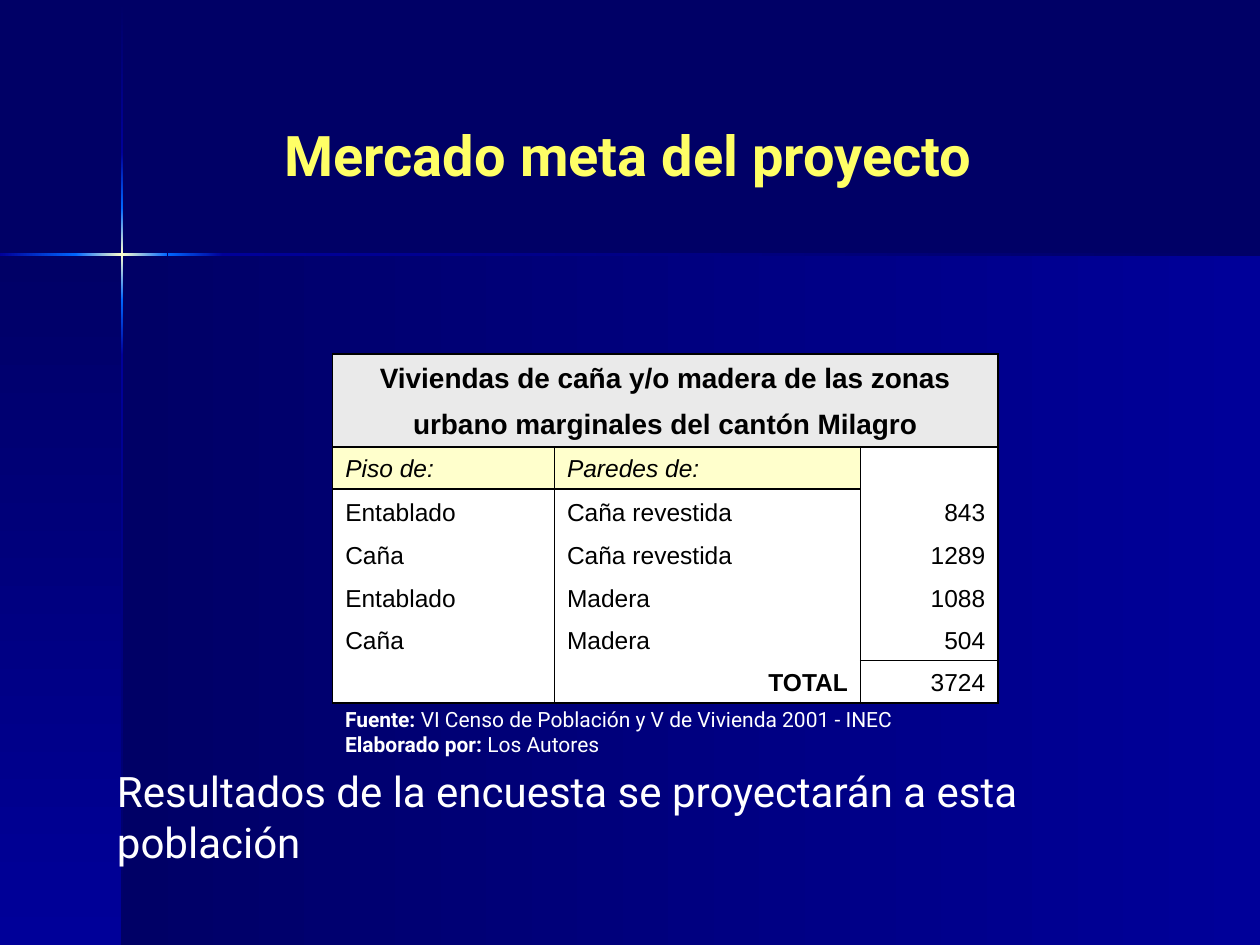
"""Build the target-market slide with its housing table."""
from lxml import etree
from pptx import Presentation
from pptx.dml.color import RGBColor
from pptx.enum.shapes import MSO_SHAPE
from pptx.enum.text import MSO_ANCHOR, PP_ALIGN
from pptx.oxml.ns import qn
from pptx.util import Inches, Pt

RECTANGLE = MSO_SHAPE.RECTANGLE
BOTTOM = MSO_ANCHOR.BOTTOM
LEFT, CENTER, RIGHT = PP_ALIGN.LEFT, PP_ALIGN.CENTER, PP_ALIGN.RIGHT

NAVY = RGBColor(0x00, 0x00, 0x66)
BLUE = RGBColor(0x00, 0x00, 0x99)
BRIGHT = RGBColor(0x00, 0x66, 0xFF)
CREAM = RGBColor(0xFF, 0xFF, 0xCC)
YELLOW = RGBColor(0xFF, 0xFF, 0x66)
WHITE = RGBColor(0xFF, 0xFF, 0xFF)
GREY = RGBColor(0xEA, 0xEA, 0xEA)
BLACK = RGBColor(0x00, 0x00, 0x00)

presentation = Presentation()
presentation.slide_width, presentation.slide_height = Inches(10), Inches(7.5)
slide = presentation.slides.add_slide(presentation.slide_layouts[6])
slide.background.fill.solid()
slide.background.fill.fore_color.rgb = NAVY


def add_gradient_block(left, top, width, height, colors, downward):
    shape = slide.shapes.add_shape(
        RECTANGLE, Inches(left), Inches(top), Inches(width), Inches(height))
    shape.shadow.inherit = False
    shape.line.fill.background()
    shape.fill.gradient()
    shape.fill.gradient_angle = 270 if downward else 0
    stops = shape.element.spPr.find(".//" + qn("a:gsLst"))
    for stop in list(stops):
        stops.remove(stop)
    for index, color in enumerate(colors):
        position = 100000 * index // (len(colors) - 1)
        stop = etree.SubElement(stops, qn("a:gs"), pos=str(position))
        etree.SubElement(stop, qn("a:srgbClr"), val=str(color))


def add_text(left, top, width, height, lines, size, color):
    box = slide.shapes.add_textbox(
        Inches(left), Inches(top), Inches(width), Inches(height))
    frame = box.text_frame
    frame.word_wrap = True
    for index, runs in enumerate(lines):
        paragraph = frame.add_paragraph() if index else frame.paragraphs[0]
        paragraph.font.name, paragraph.font.size = "Roboto", Pt(size)
        paragraph.font.color.rgb = color
        for text, bold in runs:
            run = paragraph.add_run()
            run.text, run.font.bold = text, bold


CROSS_X, CROSS_Y, BEAM = 0.97, 2.02, 0.02
add_gradient_block(CROSS_X, CROSS_Y, 10 - CROSS_X, 7.5 - CROSS_Y, (NAVY, BLUE), False)
add_gradient_block(0, CROSS_Y, CROSS_X, 7.5 - CROSS_Y, (NAVY, BLUE), True)

GLOW = (BRIGHT, CREAM, BRIGHT)
vertical_beams = [
    (0.01, 1.21, (NAVY, BLUE)), (2.82, 7.5, (BLUE, NAVY)),
    (2.38, 2.82, (BRIGHT, BLUE)), (1.21, 1.65, (BLUE, BRIGHT)), (1.65, 2.38, GLOW)]
horizontal_beams = [
    (1.77, 10, (BLUE, NAVY)), (0, 0.61, (BLUE, BRIGHT)),
    (1.33, 1.77, (BRIGHT, BLUE)), (0.6, 1.33, GLOW)]
for start, end, colors in vertical_beams:
    add_gradient_block(CROSS_X - BEAM / 2, start, BEAM, end - start, colors, True)
for start, end, colors in horizontal_beams:
    add_gradient_block(start, CROSS_Y - BEAM / 2, end - start, BEAM, colors, False)

add_text(2.16, 0.91, 6.27, 0.63, [[("Mercado meta del proyecto", True)]], 32, YELLOW)

rows = [
    ("Viviendas de caña y/o madera de las zonas", "", ""),
    ("urbano marginales del cantón Milagro", "", ""),
    ("Piso de:", "Paredes de:", ""),
    ("Entablado", "Caña revestida", "843"),
    ("Caña", "Caña revestida", "1289"),
    ("Entablado", "Madera", "1088"),
    ("Caña", "Madera", "504"),
    ("", "TOTAL", "3724"),
]
column_widths = [1.76, 2.43, 1.09]
row_heights = [0.37, 0.36, 0.33, 0.35, 0.34, 0.34, 0.33, 0.33]
ruled_below = {-1: (0, 1, 2), 1: (0, 1, 2), 2: (0, 1), 6: (2,), 7: (0, 1, 2)}

table = slide.shapes.add_table(
    len(rows), 3, Inches(2.64), Inches(2.81),
    Inches(sum(column_widths)), Inches(sum(row_heights))).table
table.first_row = table.horz_banding = False
for column, width in zip(table.columns, column_widths):
    column.width = Inches(width)
for row, height in zip(table.rows, row_heights):
    row.height = Inches(height)
for title_row in range(2):
    table.cell(title_row, 0).merge(table.cell(title_row, 2))

for row_index, texts in enumerate(rows):
    for column_index, text in enumerate(texts):
        cell = table.cell(row_index, column_index)
        is_title = row_index < 2
        is_header = row_index == 2 and column_index < 2
        is_right = column_index == 2 or text == "TOTAL"
        edges = {
            "a:lnL": True,
            "a:lnR": True,
            "a:lnT": column_index in ruled_below.get(row_index - 1, ()),
            "a:lnB": column_index in ruled_below.get(row_index, ()),
        }
        properties = cell._tc.get_or_add_tcPr()
        for tag, ruled in edges.items():
            line = etree.SubElement(properties, qn(tag), w=str(Pt(1)))
            fill = etree.SubElement(line, qn("a:solidFill" if ruled else "a:noFill"))
            if ruled:
                etree.SubElement(fill, qn("a:srgbClr"), val=str(BLACK))
        cell.fill.solid()
        cell.fill.fore_color.rgb = GREY if is_title else CREAM if is_header else WHITE
        cell.vertical_anchor = BOTTOM
        cell.text = text
        paragraph = cell.text_frame.paragraphs[0]
        paragraph.alignment = CENTER if is_title else RIGHT if is_right else LEFT
        paragraph.font.name, paragraph.font.size = "Arial", Pt(16 if is_title else 14)
        paragraph.font.bold = is_title or text == "TOTAL"
        paragraph.font.italic = is_header
        paragraph.font.color.rgb = BLACK

add_text(0.83, 6.03, 8.81, 0.5,
         [[("Resultados de la encuesta se proyectarán a esta población", False)]], 24, WHITE)
add_text(2.64, 5.56, 4.67, 0.5, [
    [("Fuente: ", True), ("VI Censo de Población y V de Vivienda 2001 - INEC", False)],
    [("Elaborado por:", True), (" Los Autores", False)],
], 12, WHITE)

presentation.save("out.pptx")
